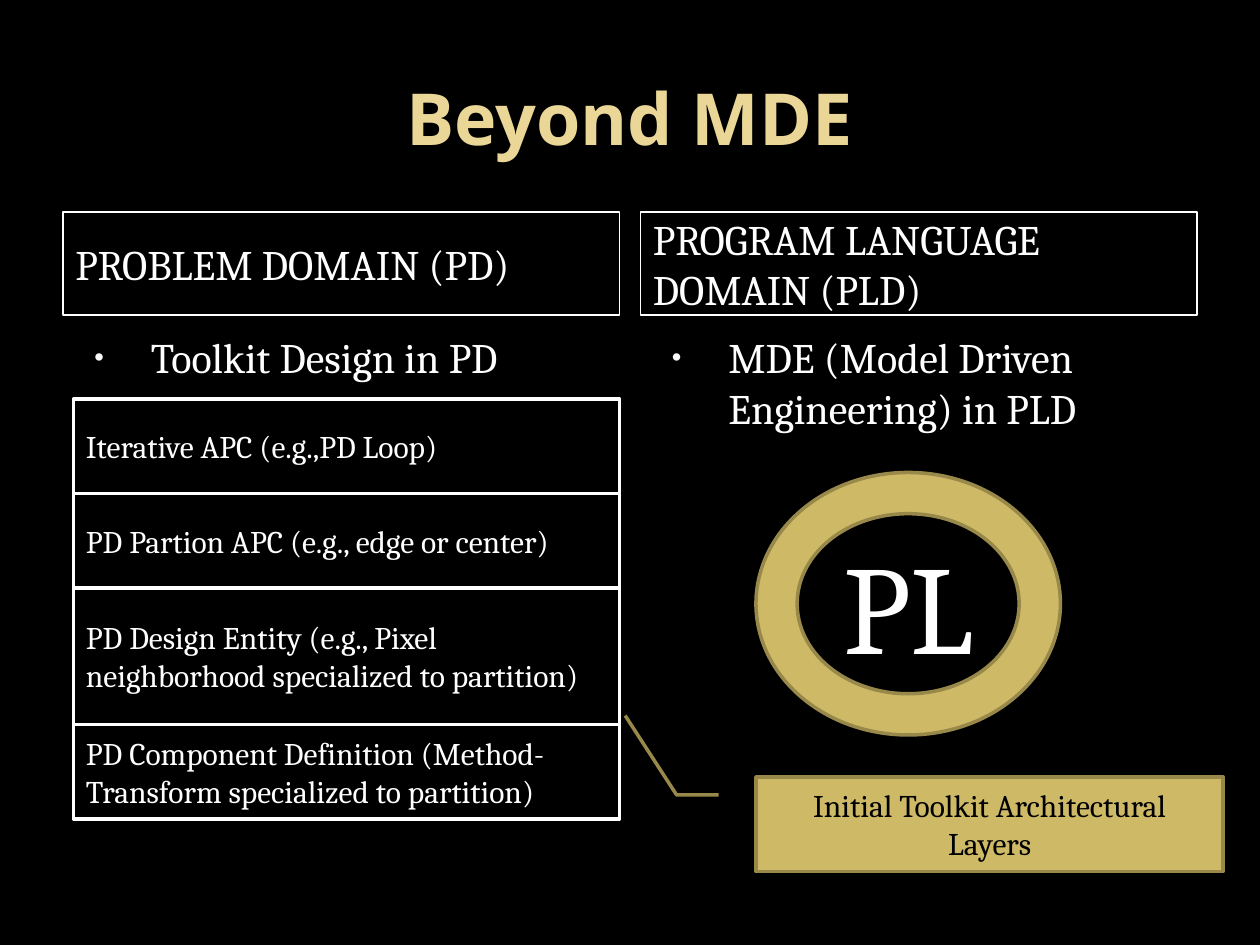
from lxml import etree
from pptx import Presentation
from pptx.dml.color import RGBColor
from pptx.enum.shapes import MSO_SHAPE
from pptx.enum.text import MSO_ANCHOR, PP_ALIGN
from pptx.oxml.ns import qn
from pptx.util import Pt

RECTANGLE, DONUT, CALLOUT = MSO_SHAPE.RECTANGLE, MSO_SHAPE.DONUT, MSO_SHAPE.LINE_CALLOUT_2
TOP, MIDDLE = MSO_ANCHOR.TOP, MSO_ANCHOR.MIDDLE
LEFT, CENTER = PP_ALIGN.LEFT, PP_ALIGN.CENTER
BLACK, WHITE, GOLD, DARK_GOLD = "000000", "FFFFFF", "CEB966", "98894B"
BODY_FONT = "Cambria"

# Content
TITLE = "Beyond MDE"
COLUMNS = [
    ("PROBLEM DOMAIN (PD)", "Toolkit Design in PD"),
    ("PROGRAM LANGUAGE DOMAIN (PLD)", "MDE (Model Driven Engineering) in PLD"),
]
LAYERS = [  # text, height
    ("Iterative APC (e.g.,PD Loop)", 54),
    ("PD Partion APC (e.g., edge or center)", 54),
    ("PD Design Entity (e.g., Pixel neighborhood specialized to partition)", 78),
    ("PD Component Definition (Method- Transform specialized to partition)", 54),
]
RING_LABEL = "PL"
CALLOUT_LABEL = "Initial Toolkit Architectural Layers"

# Layout
MARGIN, COLUMN_WIDTH, COLUMN_STEP = 36, 318, 330
LAYER_LEFT, LAYER_TOP, LAYER_WIDTH = 42, 228, 312
RING_LEFT = 432


def color(value):
    return RGBColor.from_string(value)


def write(box, text, size, ink=WHITE, align=LEFT, anchor=MIDDLE, font=BODY_FONT, bold=False):
    frame = box.text_frame
    frame.text = text
    frame.word_wrap = True
    frame.vertical_anchor = anchor
    para = frame.paragraphs[0]
    para.alignment = align
    span = para.runs[0]
    span.font.name, span.font.size, span.font.bold = font, Pt(size), bold
    span.font.color.rgb = color(ink)
    return para


def add_text(page, area, text, size, **style):
    box = page.shapes.add_textbox(*map(Pt, area))
    return write(box, text, size, **style)


def add_panel(page, kind, area, text, size, line, line_width, fill=None, **style):
    panel = page.shapes.add_shape(kind, *map(Pt, area))
    panel.shadow.inherit = False
    if fill:
        panel.fill.solid()
        panel.fill.fore_color.rgb = color(fill)
    else:
        panel.fill.background()
    panel.line.color.rgb = color(line)
    panel.line.width = Pt(line_width)
    write(panel, text, size, **style)
    return panel


def add_bullet(para):
    props = para._p.get_or_add_pPr()
    props.set("marL", str(Pt(43.2)))
    props.set("indent", str(-Pt(32.4)))
    ink = etree.SubElement(props, qn("a:buClr"))
    etree.SubElement(ink, qn("a:srgbClr"), val="F9F9F9")
    etree.SubElement(props, qn("a:buSzPct"), val="65000")
    etree.SubElement(props, qn("a:buFont"), typeface="Arial")
    etree.SubElement(props, qn("a:buChar"), char="•")


def set_adjustments(shape, values):
    for index, value in enumerate(values):
        shape.adjustments[index] = value


def main():
    deck = Presentation()
    deck.slide_width, deck.slide_height = Pt(720), Pt(540)
    page = deck.slides.add_slide(deck.slide_layouts[6])
    page.background.fill.solid()
    page.background.fill.fore_color.rgb = color(BLACK)

    # Title
    add_text(page, (MARGIN, 21.6, 648, 90), TITLE, 41, ink="EAD696",
             align=CENTER, font="Open Sans", bold=True)

    # Column headings and bullets
    for index, (heading, point) in enumerate(COLUMNS):
        left = MARGIN + index * COLUMN_STEP
        add_panel(page, RECTANGLE, (left, 121, COLUMN_WIDTH, 59), heading, 24, WHITE, 1)
        add_bullet(add_text(page, (left, 186, COLUMN_WIDTH, 297), point, 24, anchor=TOP))

    # Program language ring
    ring = add_panel(page, DONUT, (RING_LEFT, 270, 174, 150), RING_LABEL, 72,
                     DARK_GOLD, 2, fill=GOLD, align=CENTER)
    set_adjustments(ring, [0.157])

    # Callout pointing at the layers
    callout = add_panel(page, CALLOUT, (RING_LEFT, 444, 267, 54), CALLOUT_LABEL, 18,
                        DARK_GOLD, 2, fill=GOLD, ink=BLACK, align=CENTER)
    set_adjustments(callout, [0.19, -0.08, 0.19, -0.17, -0.65, -0.28])

    # Stacked layers
    top = LAYER_TOP
    for text, height in LAYERS:
        add_panel(page, RECTANGLE, (LAYER_LEFT, top, LAYER_WIDTH, height), text, 18, WHITE, 2)
        top += height

    deck.save("out.pptx")


if __name__ == "__main__":
    main()
